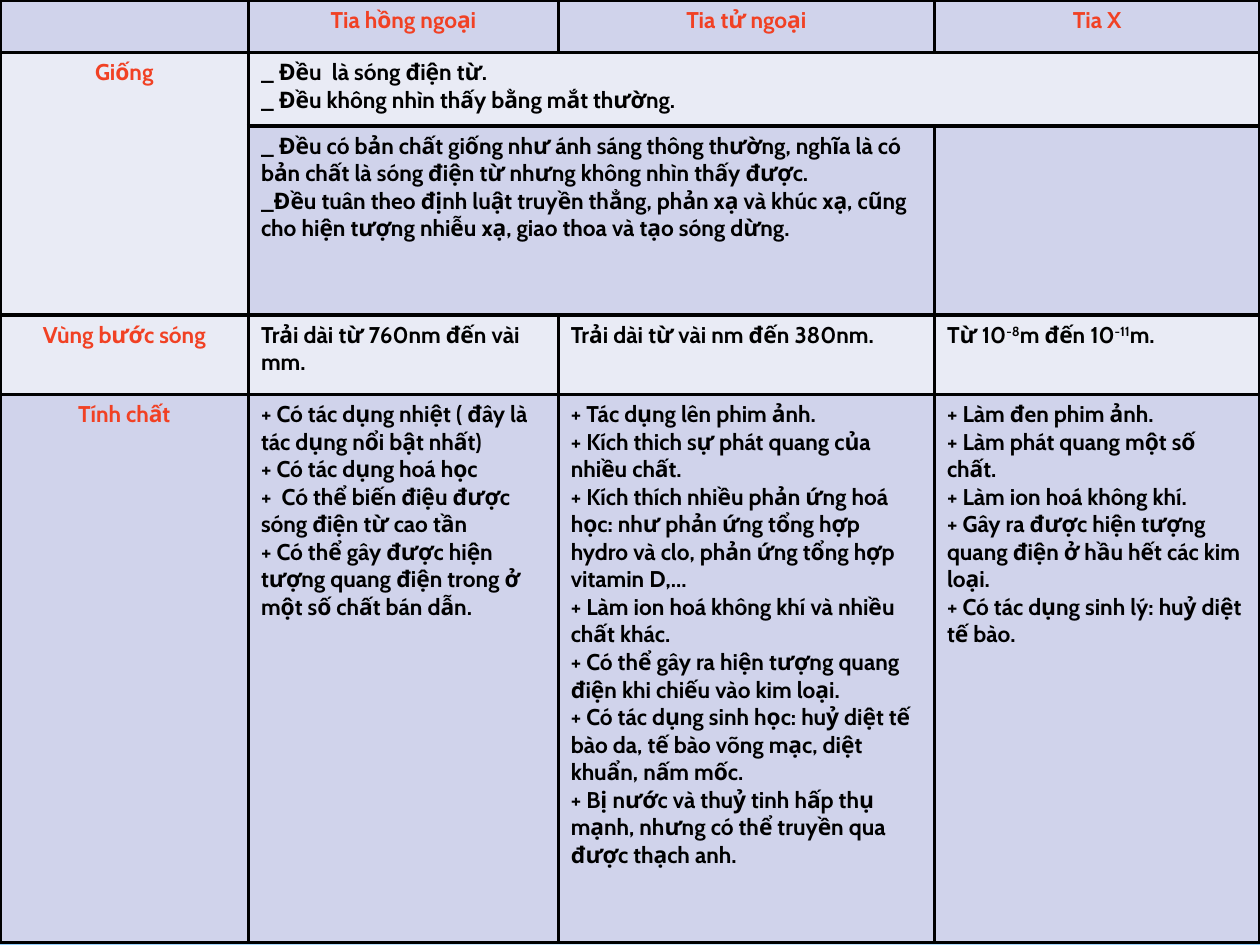
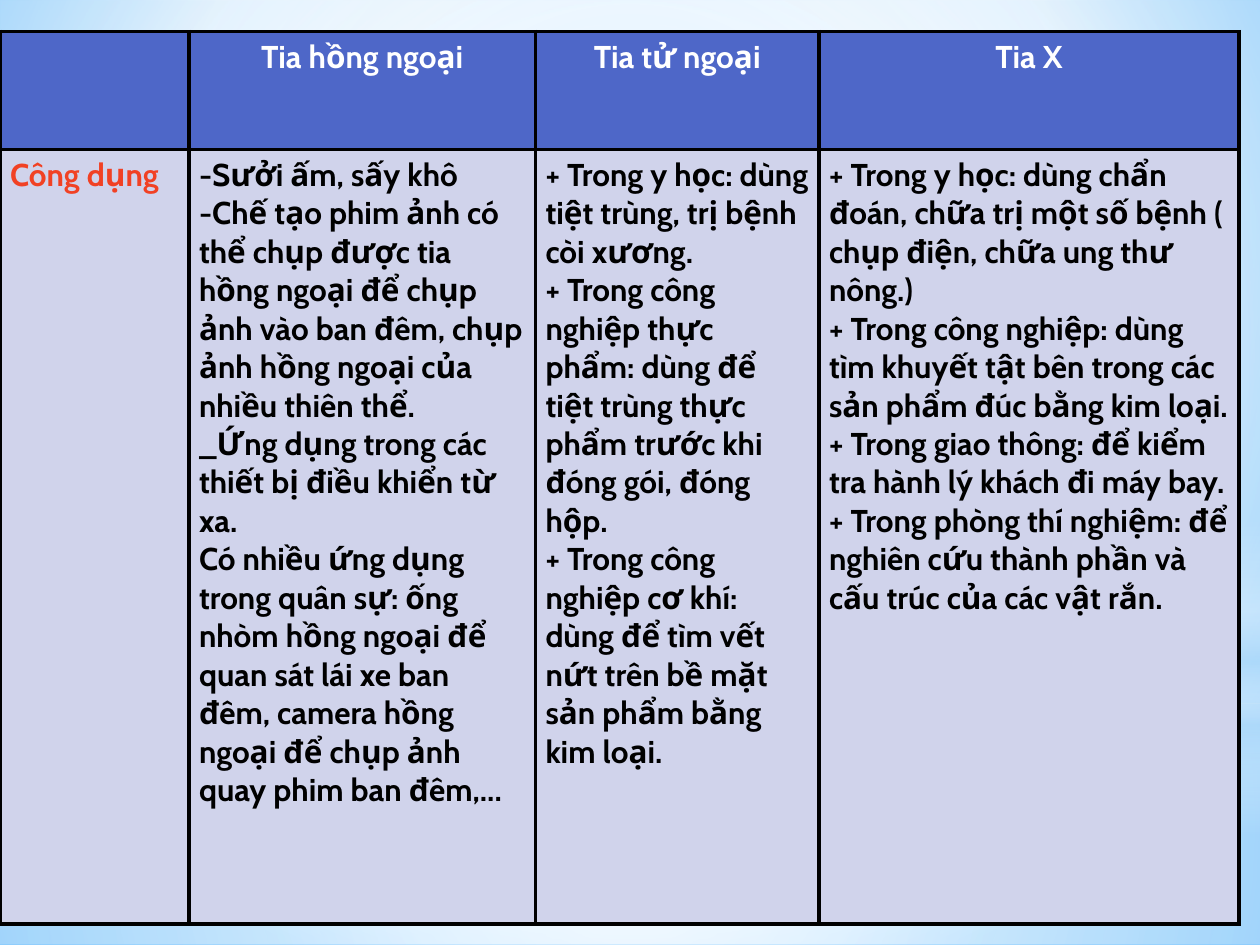
"""Build two slides comparing infrared, ultraviolet and X rays."""
from lxml.etree import SubElement
from pptx import Presentation
from pptx.dml.color import RGBColor
from pptx.enum.shapes import MSO_SHAPE
from pptx.enum.text import PP_ALIGN
from pptx.oxml.ns import qn
from pptx.util import Pt

COLORS = {
    "ink": "000000", "white": "FFFFFF", "label": "F14124", "header": "4E67C8",
    "dark_band": "D0D3EB", "light_band": "E9EBF5", "haze": "B4DCFA",
    "sky": "9ED5FF", "deep_sky": "5BB9FF",
}
CENTER = (50, 50, 50, 50)
RAYS = ["", "Tia hồng ngoại", "Tia tử ngoại", "Tia X"]

COMPARISON = [
    RAYS,
    ["Giống", ["_ Đều  là sóng điện từ.", "_ Đều không nhìn thấy bằng mắt thường."], "", ""],
    ["", [
        "_ Đều có bản chất giống như ánh sáng thông thường, nghĩa là có bản chất "
        "là sóng điện từ nhưng không nhìn thấy được.",
        "_Đều tuân theo định luật truyền thẳng, phản xạ và khúc xạ, cũng cho hiện tượng "
        "nhiễu xạ, giao thoa và tạo sóng dừng.",
    ], "", ""],
    ["Vùng bước sóng", "Trải dài từ 760nm đến vài mm.", "Trải dài từ vài nm đến 380nm.",
     "Từ 10^-8^m đến 10^-11^m."],
    ["Tính chất", [
        "+ Có tác dụng nhiệt ( đây là tác dụng nổi bật nhất)",
        "+ Có tác dụng hoá học",
        "+  Có thể biến điệu được sóng điện từ cao tần",
        "+ Có thể gây được hiện tượng quang điện trong ở một số chất bán dẫn.",
    ], [
        "+ Tác dụng lên phim ảnh.",
        "+ Kích thich sự phát quang của nhiều chất.",
        "+ Kích thích nhiều phản ứng hoá học: như phản ứng tổng hợp hydro và clo, "
        "phản ứng tổng hợp vitamin D,...",
        "+ Làm ion hoá không khí và nhiều chất khác.",
        "+ Có thể gây ra hiện tượng quang điện khi chiếu vào kim loại.",
        "+ Có tác dụng sinh học: huỷ diệt tế bào da, tế bào võng mạc, diệt khuẩn, nấm mốc.",
        "+ Bị nước và thuỷ tinh hấp thụ mạnh, nhưng có thể truyền qua được thạch anh.",
    ], [
        "+ Làm đen phim ảnh.",
        "+ Làm phát quang một số chất.",
        "+ Làm ion hoá không khí.",
        "+ Gây ra được hiện tượng quang điện ở hầu hết các kim loại.",
        "+ Có tác dụng sinh lý: huỷ diệt tế bào.",
    ]],
]

USES = [
    RAYS,
    ["Công dụng", [
        "-Sưởi ấm, sấy khô",
        "-Chế tạo phim ảnh có thể chụp được tia hồng ngoại để chụp ảnh vào ban đêm, "
        "chụp ảnh hồng ngoại của nhiều thiên thể.",
        "_Ứng dụng trong các thiết bị điều khiển từ xa.",
        "Có nhiều ứng dụng trong quân sự: ống nhòm hồng ngoại để quan sát lái xe ban đêm, "
        "camera hồng ngoại để chụp ảnh quay phim ban đêm,...",
    ], [
        "+ Trong y học: dùng tiệt trùng, trị bệnh còi xương.",
        "+ Trong công nghiệp thực phẩm: dùng để tiệt trùng thực phẩm trước khi đóng gói, đóng hộp.",
        "+ Trong công nghiệp cơ khí: dùng để tìm vết nứt trên bề mặt sản phẩm bằng kim loại.",
    ], [
        "+ Trong y học: dùng chẩn đoán, chữa trị một số bệnh ( chụp điện, chữa ung thư nông.)",
        "+ Trong công nghiệp: dùng tìm khuyết tật bên trong các sản phẩm đúc bằng kim loại.",
        "+ Trong giao thông: để kiểm tra hành lý khách đi máy bay.",
        "+ Trong phòng thí nghiệm: để nghiên cứu thành phần và cấu trúc của các vật rắn.",
    ]],
]


class RaySlides:
    """Hold the deck, its style and the current slide."""

    def __init__(self):
        self.deck = Presentation()
        self.deck.slide_width, self.deck.slide_height = Pt(720), Pt(540)
        self.page = None

    def add_page(self):
        self.page = self.deck.slides.add_slide(self.deck.slide_layouts[6])

    def paint_gradient(self, element, stops, focus=None):
        gradient = next(element.iter(qn("a:gradFill")))
        gradient.clear()
        gradient.set("rotWithShape", "1")
        stop_list = SubElement(gradient, qn("a:gsLst"))
        for position, color, opacity in stops:
            stop = SubElement(stop_list, qn("a:gs"), pos=str(position * 1000))
            tint = SubElement(stop, qn("a:srgbClr"), val=COLORS[color])
            if opacity < 100:
                SubElement(tint, qn("a:alpha"), val=str(opacity * 1000))
        if focus:
            route = SubElement(gradient, qn("a:path"), {"path": "circle"})
            sides = {side: str(value * 1000) for side, value in zip("ltrb", focus)}
            SubElement(route, qn("a:fillToRect"), sides)
        else:
            SubElement(gradient, qn("a:lin"), ang="5400000", scaled="0")

    def background(self, stops, focus):
        master = self.deck.slide_master
        master.background.fill.gradient()
        self.paint_gradient(master.element, stops, focus)

    def master_glow(self, kind, top, height, stops, focus=None):
        glow = self.page.shapes.add_shape(kind, 0, Pt(top), Pt(720), Pt(height))
        glow.shadow.inherit = False
        glow.line.fill.background()
        glow.fill.gradient()
        self.paint_gradient(glow.element, stops, focus)
        tree = self.deck.slide_master.element.cSld.spTree
        glow.element.nvSpPr.cNvPr.set("id", str(100 + len(tree)))
        tree.append(glow.element)

    def fill_text(self, cell, content, size, color, alignment):
        lines = content if isinstance(content, list) else [content]
        font_format = {"name": "Cabin", "size": Pt(size), "bold": True}
        for index, line in enumerate(lines):
            para = cell.text_frame.add_paragraph() if index else cell.text_frame.paragraphs[0]
            para.alignment = alignment
            for part, piece in enumerate(line.split("^")):
                if not piece:
                    continue
                span = para.add_run()
                span.text = piece
                for name, value in font_format.items():
                    setattr(span.font, name, value)
                span.font.color.rgb = RGBColor.from_string(COLORS[color])
                if part % 2:
                    span._r.get_or_add_rPr().set("baseline", "30000")

    def border(self, cell):
        properties = cell._tc.get_or_add_tcPr()
        for index, side in enumerate("LRTB"):
            line = SubElement(properties, qn(f"a:ln{side}"), w=str(Pt(2.25)))
            fill = SubElement(line, qn("a:solidFill"))
            SubElement(fill, qn("a:srgbClr"), val=COLORS["ink"])
            properties.insert(index, line)

    def table(self, top, widths, heights, content, bands, size, side_inset,
              header_color, label_alignment, merges=()):
        frame = self.page.shapes.add_table(
            len(heights), len(widths), 0, Pt(top), Pt(sum(widths)), Pt(sum(heights)))
        table = frame.table
        table.first_row = table.horz_banding = False
        for column, width in zip(table.columns, widths):
            column.width = Pt(width)
        for row, height in zip(table.rows, heights):
            row.height = Pt(height)
        for first, last in merges:
            table.cell(*first).merge(table.cell(*last))
        for row, (values, band) in enumerate(zip(content, bands)):
            for column, value in enumerate(values):
                cell = table.cell(row, column)
                cell.margin_left = cell.margin_right = Pt(side_inset)
                cell.fill.solid()
                cell.fill.fore_color.rgb = RGBColor.from_string(COLORS[band])
                self.border(cell)
                if row == 0:
                    self.fill_text(cell, value, size, header_color, PP_ALIGN.CENTER)
                elif column == 0:
                    self.fill_text(cell, value, size, "label", label_alignment)
                else:
                    self.fill_text(cell, value, size, "ink", PP_ALIGN.LEFT)


def main():
    """Draw the shared backdrop and both tables, then save."""
    slides = RaySlides()
    slides.background([(0, "sky", 100), (60, "white", 100), (100, "deep_sky", 100)],
                      (20, 10, 20, 60))
    slides.add_page()
    slides.master_glow(MSO_SHAPE.RECTANGLE, 402, 138,
                       [(0, "white", 91), (37, "white", 76), (100, "haze", 79)], CENTER)
    slides.master_glow(MSO_SHAPE.RECTANGLE, 0, 402,
                       [(0, "white", 89), (48, "white", 62), (100, "haze", 79)], CENTER)
    slides.master_glow(MSO_SHAPE.RECTANGLE, 297, 180,
                       [(0, "white", 0), (29, "white", 30), (45, "haze", 40),
                        (55, "white", 26), (65, "haze", 60), (100, "white", 0)])
    slides.master_glow(MSO_SHAPE.OVAL, 126, 402,
                       [(0, "white", 100), (56, "white", 0)], CENTER)
    slides.table(0, [142, 177, 215, 186], [30, 42, 108, 45.5, 313], COMPARISON,
                 ["dark_band", "light_band", "dark_band", "light_band", "dark_band"],
                 13, 7.2, "label", PP_ALIGN.CENTER,
                 [((1, 0), (2, 0)), ((1, 1), (1, 3)), ((2, 1), (2, 2))])
    slides.add_page()
    slides.table(18, [108, 198, 162, 240], [67.5, 442.5], USES,
                 ["header", "dark_band"], 18, 5.75, "white", PP_ALIGN.LEFT)
    slides.deck.save("out.pptx")


if __name__ == "__main__":
    main()
